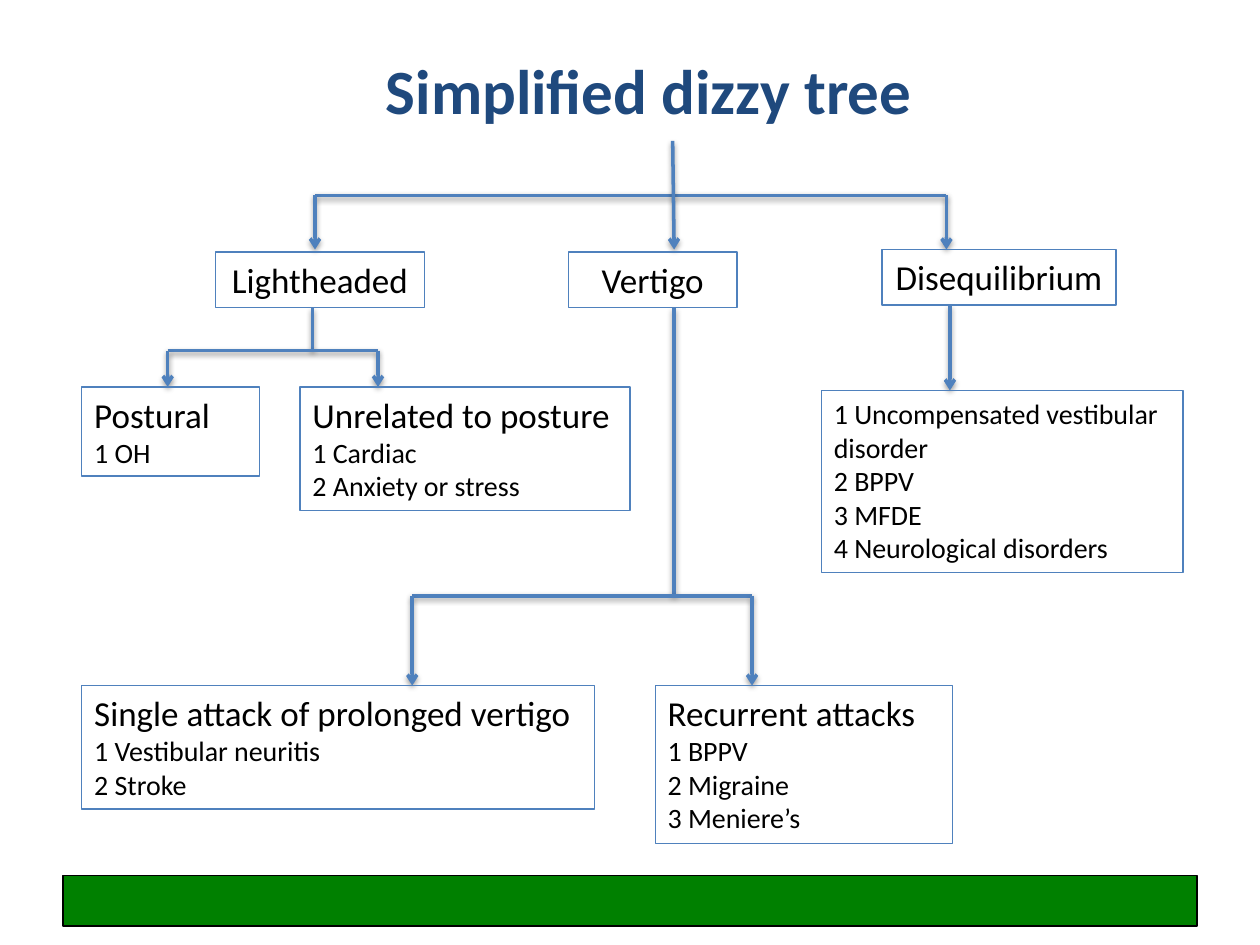
from lxml import etree
from pptx import Presentation
from pptx.dml.color import RGBColor
from pptx.enum.shapes import MSO_CONNECTOR, MSO_SHAPE
from pptx.enum.text import MSO_ANCHOR, MSO_AUTO_SIZE, PP_ALIGN
from pptx.oxml import parse_xml
from pptx.oxml.ns import qn
from pptx.util import Cm, Pt

STRAIGHT = MSO_CONNECTOR.STRAIGHT
RECT = MSO_SHAPE.RECTANGLE
MIDDLE = MSO_ANCHOR.MIDDLE
GROW = MSO_AUTO_SIZE.SHAPE_TO_FIT_TEXT
CENTER = PP_ALIGN.CENTER
LEFT = PP_ALIGN.LEFT

COLORS = {
    "title": "1F497D",
    "line": "4F81BD",
    "text": "000000",
    "bar": "008000",
}
SHADOW = (
    '<a:effectLst xmlns:a="http://schemas.openxmlformats.org/drawingml/2006/main">'
    '<a:outerShdw blurRad="40000" dist="20000" dir="5400000" rotWithShape="0">'
    '<a:srgbClr val="000000"><a:alpha val="38000"/></a:srgbClr>'
    "</a:outerShdw></a:effectLst>"
)

KINDS = [
    ("Lightheaded", 4.34, 5.08, 4.22),
    ("Vertigo", 11.46, 5.08, 3.4),
    ("Disequilibrium", 17.78, 5.03, 4.72),
]
CAUSES = [
    ("Postural", ["1 OH"], 1.65, 7.8, 3.58, 1.8),
    ("Unrelated to posture", ["1 Cardiac", "2 Anxiety or stress"],
     6.05, 7.8, 6.65, 2.49),
    ("", ["1 Uncompensated vestibular disorder", "2 BPPV", "3 MFDE",
          "4 Neurological disorders"], 16.56, 7.87, 7.29, 3.68),
    ("Single attack of prolonged vertigo",
     ["1 Vestibular neuritis", "2 Stroke"], 1.65, 13.82, 10.34, 2.49),
    ("Recurrent attacks", ["1 BPPV", "2 Migraine", "3 Meniere’s"],
     13.21, 13.82, 5.99, 3.18),
]


def tint(name):
    return RGBColor.from_string(COLORS[name])


def style(para, size, color="text", align=LEFT, bold=False):
    para.alignment = align
    font = para.font
    font.name = "Calibri"
    font.size = Pt(size)
    font.bold = bold
    font.color.rgb = tint(color)


def add_title(slide, text):
    title = slide.shapes.title
    title.left, title.top = Cm(1.65), Cm(0.76)
    title.width, title.height = Cm(22.86), Cm(2.08)
    title.text_frame.text = text
    title.text_frame.vertical_anchor = MIDDLE
    style(title.text_frame.paragraphs[0], 36, "title", CENTER, True)


def add_bar(slide):
    bar = slide.shapes.add_shape(RECT, Cm(1.27), Cm(17.65), Cm(22.86), Cm(1.02))
    bar.shadow.inherit = False
    bar.fill.solid()
    bar.fill.fore_color.rgb = tint("bar")
    bar.line.color.rgb = tint("text")
    bar.line.width = Pt(0.75)


def add_box(slide, rows, left, top, width, height, align=LEFT):
    box = slide.shapes.add_textbox(Cm(left), Cm(top), Cm(width), Cm(height))
    box.line.color.rgb = tint("line")
    box.line.width = Pt(0.75)
    frame = box.text_frame
    frame.word_wrap = True
    frame.auto_size = GROW
    frame.text = "\n".join(text for text, size in rows)
    for para, (text, size) in zip(frame.paragraphs, rows):
        style(para, size, align=align)


def add_line(slide, x1, y1, x2, y2, arrow=False):
    line = slide.shapes.add_connector(STRAIGHT, Cm(x1), Cm(y1), Cm(x2), Cm(y2))
    line.line.color.rgb = tint("line")
    line.line.width = Pt(2)
    if arrow:
        etree.SubElement(line.line._get_or_add_ln(), qn("a:tailEnd"), type="arrow")
    line._element.spPr.append(parse_xml(SHADOW))


def add_fork(slide, bar, ends, bottom):
    add_line(slide, ends[0], bar, ends[-1], bar)
    for x in ends:
        add_line(slide, x, bar, x, bottom, True)


def main():
    deck = Presentation()
    deck.slide_width, deck.slide_height = Cm(25.4), Cm(19.05)
    slide = deck.slides.add_slide(deck.slide_layouts[5])
    add_bar(slide)
    add_title(slide, "Simplified dizzy tree")

    add_fork(slide, 3.94, (6.35, 19.08), 5.03)
    add_line(slide, 13.56, 2.84, 13.59, 5.03, True)
    add_line(slide, 6.3, 6.2, 6.3, 7.06)
    add_fork(slide, 7.07, (3.38, 7.62), 7.8)
    add_line(slide, 13.59, 6.2, 13.59, 12.01)
    add_fork(slide, 12.01, (8.31, 15.16), 13.82)
    add_line(slide, 19.15, 6.15, 19.15, 7.87, True)

    for name, left, top, width in KINDS:
        add_box(slide, [(name, 20)], left, top, width, 1.12, CENTER)
    for head, items, *place in CAUSES:
        rows = [(head, 20)] if head else []
        add_box(slide, rows + [(item, 16) for item in items], *place)
    deck.save("out.pptx")


if __name__ == "__main__":
    main()
